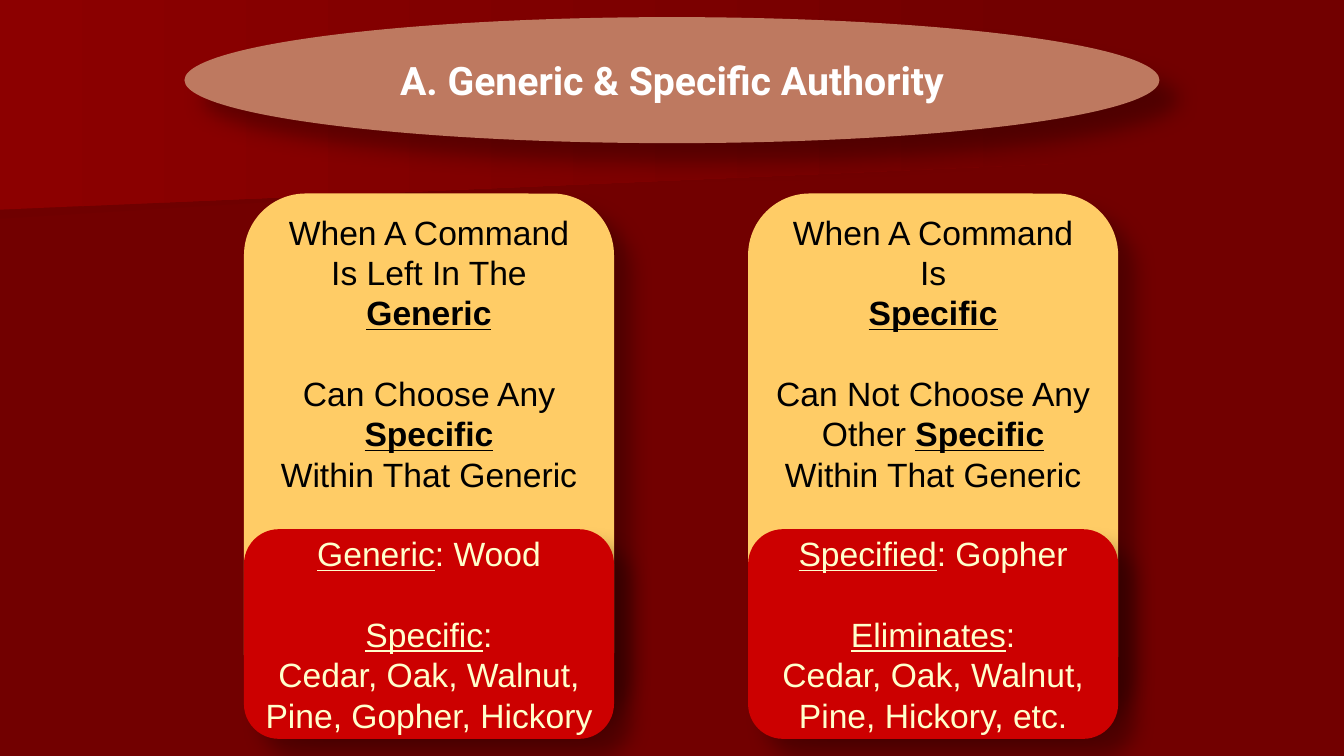
from lxml import etree
from pptx import Presentation
from pptx.dml.color import RGBColor
from pptx.enum import shapes, text
from pptx.oxml import ns
from pptx.util import Inches, Pt

MAROON = RGBColor(0x72, 0x00, 0x00)
DARK_MAROON = RGBColor(0x6F, 0x00, 0x00)
BRIGHT_MAROON = RGBColor(0x8C, 0x00, 0x00)
CLAY = RGBColor(0xBE, 0x79, 0x60)
GOLD = RGBColor(0xFF, 0xCC, 0x66)
RED = RGBColor(0xCC, 0x00, 0x00)
CREAM = RGBColor(0xFF, 0xFF, 0xCC)
WHITE = RGBColor(0xFF, 0xFF, 0xFF)
BLACK = RGBColor(0x00, 0x00, 0x00)

LINE_HEIGHT = Pt(28.8)
CARD_WIDTH = 3.67
KEYWORD = {"bold": True, "underline": True}
LABEL = {"underline": True}
PLAIN = {}

# Each card has a rule and an example; each of these is a list of blocks of
# lines, and a line is a list of (words, format) runs.
CARDS = [
    {
        "left": 2.42,
        "rule": [
            [[("When A Command", PLAIN)], [("Is Left In The", PLAIN)],
             [("Generic", KEYWORD)]],
            [[("Can Choose Any", PLAIN)], [("Specific", KEYWORD)],
             [("Within That Generic", PLAIN)]],
        ],
        "example": [
            [[("Generic", LABEL), (": Wood", PLAIN)]],
            [[("Specific", LABEL), (":", PLAIN)],
             [("Cedar, Oak, Walnut,", PLAIN)],
             [("Pine, Gopher, Hickory", PLAIN)]],
        ],
    },
    {
        "left": 7.42,
        "rule": [
            [[("When A Command", PLAIN)], [("Is", PLAIN)],
             [("Specific", KEYWORD)]],
            [[("Can Not Choose Any", PLAIN)],
             [("Other ", PLAIN), ("Specific", KEYWORD)],
             [("Within That Generic", PLAIN)]],
        ],
        "example": [
            [[("Specified", LABEL), (": Gopher", PLAIN)]],
            [[("Eliminates", LABEL), (":", PLAIN)],
             [("Cedar, Oak, Walnut,", PLAIN)],
             [("Pine, Hickory, etc.", PLAIN)]],
        ],
    },
]


def set_font(font, color, **values):
    for name, value in values.items():
        setattr(font, name, value)
    font.color.rgb = color


def add_shadow(shape):
    shape.shadow.inherit = False
    effects = shape.element.spPr.find(ns.qn("a:effectLst"))
    shadow = etree.SubElement(
        effects, ns.qn("a:outerShdw"), blurRad=str(Pt(15)), dist=str(Pt(18)),
        dir="2700000", algn="ctr", rotWithShape="0")
    color = etree.SubElement(shadow, ns.qn("a:srgbClr"), val=str(BLACK))
    etree.SubElement(color, ns.qn("a:alpha"), val="30000")


def add_panel(slide, preset, box, color):
    panel = slide.shapes.add_shape(preset, *map(Inches, box))
    panel.fill.solid()
    panel.fill.fore_color.rgb = color
    panel.line.fill.background()
    add_shadow(panel)
    return panel


def add_backdrop(slide, corners, start_color):
    """Draw a background wedge that fades to the background colour."""
    points = [(Inches(x), Inches(y)) for x, y in corners]
    builder = slide.shapes.build_freeform(*points[0])
    builder.add_line_segments(points[1:], close=True)
    wedge = builder.convert_to_shape()
    wedge.shadow.inherit = False
    wedge.line.fill.background()
    wedge.fill.gradient()
    wedge.fill.gradient_angle = 0
    for stop, color in zip(wedge.fill.gradient_stops, (start_color, MAROON)):
        stop.color.rgb = color


def add_title(slide, words):
    box = (1.83, 0.17, 9.67, 1.25)
    oval = add_panel(slide, shapes.MSO_SHAPE.OVAL, box, CLAY)
    title = slide.shapes.title
    oval.element.addnext(title.element)
    title.left, title.top, title.width, title.height = map(Inches, box)
    title.text_frame.text = words
    title.text_frame.vertical_anchor = text.MSO_ANCHOR.MIDDLE
    heading = title.text_frame.paragraphs[0]
    heading.alignment = text.PP_ALIGN.CENTER
    set_font(heading.runs[0].font, WHITE, name="Roboto", size=Pt(28), bold=True)


def add_text_panel(slide, box, fill, color, anchor, blocks):
    panel = add_panel(slide, shapes.MSO_SHAPE.ROUNDED_RECTANGLE, box, fill)
    frame = panel.text_frame
    frame.word_wrap = False
    frame.vertical_anchor = anchor
    frame.margin_top = frame.margin_bottom = 0
    for block_index, block in enumerate(blocks):
        for line_index, line in enumerate(block):
            first = block_index == line_index == 0
            paragraph = frame.paragraphs[0] if first else frame.add_paragraph()
            paragraph.alignment = text.PP_ALIGN.CENTER
            paragraph.line_spacing = LINE_HEIGHT
            if block_index and not line_index:
                paragraph.space_before = LINE_HEIGHT
            for words, style in line:
                run = paragraph.add_run()
                run.text = words
                set_font(run.font, color, name="Arial", size=Pt(24), **style)


def main():
    prs = Presentation()
    prs.slide_width, prs.slide_height = Inches(13.33), Inches(7.5)
    slide = prs.slides.add_slide(prs.slide_layouts[5])
    slide.background.fill.solid()
    slide.background.fill.fore_color.rgb = MAROON

    add_backdrop(slide, [(10.37, 1.53), (0, 2.17), (0, 1.01), (10.39, 1.01),
                         (10.37, 1.28)], DARK_MAROON)
    add_backdrop(slide, [(10.56, 1.62), (0, 2.08), (0, 0), (10.56, 0)],
                 BRIGHT_MAROON)
    add_title(slide, "A. Generic & Specific Authority")
    for card in CARDS:
        add_text_panel(slide, (card["left"], 1.92, CARD_WIDTH, 5.17), GOLD,
                       BLACK, text.MSO_ANCHOR.TOP, card["rule"])
        add_text_panel(slide, (card["left"], 5.25, CARD_WIDTH, 2.08), RED,
                       CREAM, text.MSO_ANCHOR.MIDDLE, card["example"])
    prs.save("out.pptx")


if __name__ == "__main__":
    main()
